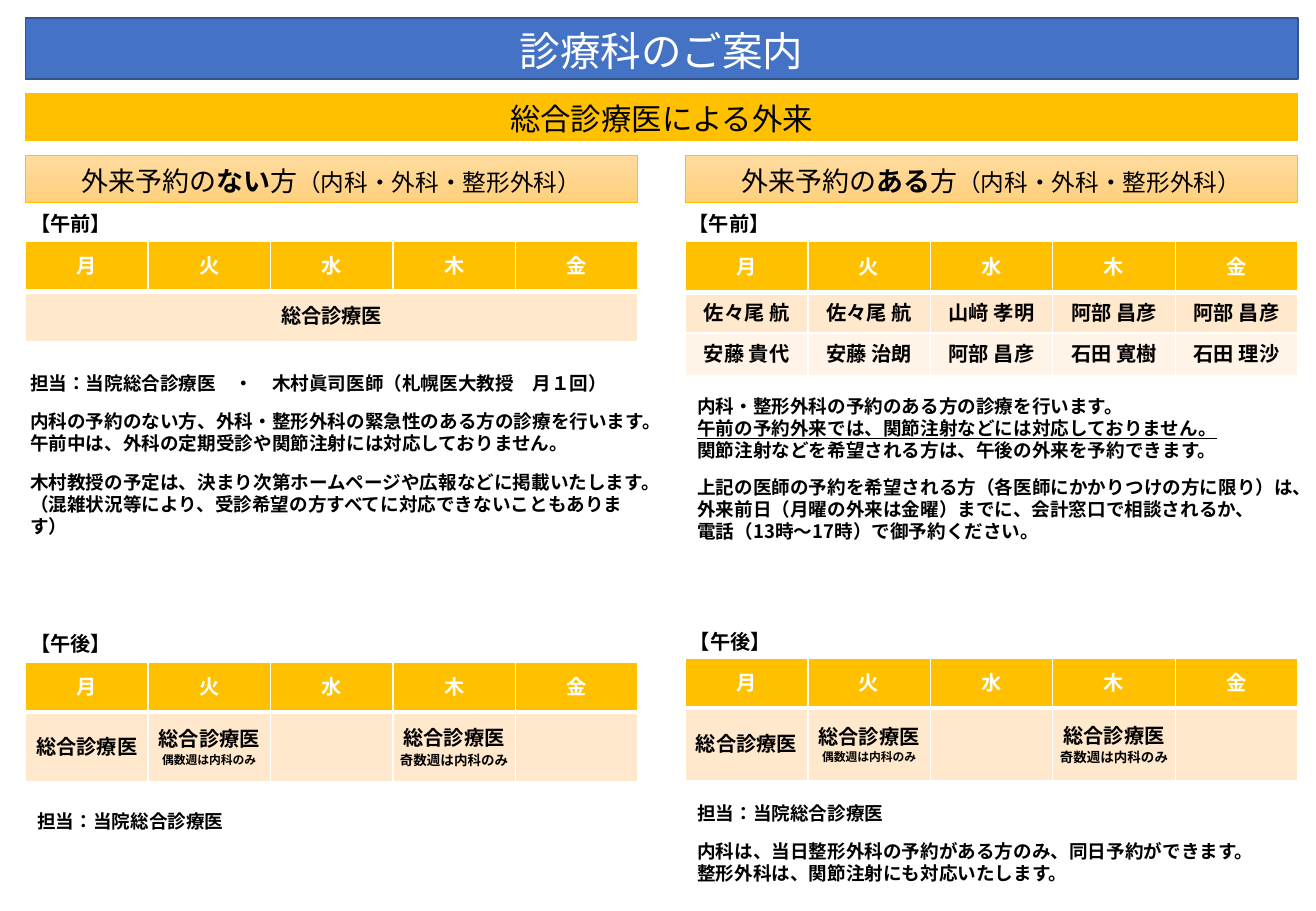
from pptx import Presentation
from pptx.dml.color import RGBColor
from pptx.enum.lang import MSO_LANGUAGE_ID
from pptx.enum.shapes import MSO_SHAPE
from pptx.enum.text import MSO_ANCHOR, PP_ALIGN
from pptx.oxml.ns import qn
from pptx.util import Inches, Pt
from lxml import etree

FONT = "Noto Sans CJK JP"
RECTANGLE = MSO_SHAPE.RECTANGLE
MIDDLE = MSO_ANCHOR.MIDDLE
LEFT, CENTER = PP_ALIGN.LEFT, PP_ALIGN.CENTER
JAPANESE = MSO_LANGUAGE_ID.JAPANESE

WHITE = RGBColor(0xFF, 0xFF, 0xFF)
BLACK = RGBColor(0, 0, 0)
BLUE = RGBColor(0x44, 0x72, 0xC4)
NAVY = RGBColor(0x32, 0x54, 0x91)
GOLD = RGBColor(0xFF, 0xC0, 0x00)
SAND_TOP = RGBColor(0xFF, 0xDB, 0x9E)
SAND_BOTTOM = RGBColor(0xFF, 0xD0, 0x7C)
PEACH = RGBColor(0xFF, 0xE8, 0xCC)
CREAM = RGBColor(0xFF, 0xF4, 0xE7)

LEFT_COLUMN, RIGHT_COLUMN = 0.21, 5.64
COLUMN_WIDTH, FULL_WIDTH = 5.04, 10.47
LOOSE, TIGHT = 1.3, 1.2  # line pitch as a multiple of the text size

WEEKDAYS = ["月", "火", "水", "木", "金"]
GENERALIST = "総合診療医"
STAFF = "担当：当院総合診療医"
NO_INJECTIONS = "午前の予約外来では、関節注射などには対応しておりません。"


class ClinicPage:
    """Style and drawing methods for the current slide."""

    def __init__(self, deck):
        self.page = deck.slides.add_slide(deck.slide_layouts[6])

    def style(self, span, size, bold=False, color=BLACK):
        font = span.font
        font.name, font.size, font.bold = FONT, Pt(size), bold
        font.color.rgb = color
        font.language_id = JAPANESE
        latin = span._r.get_or_add_rPr().find(qn("a:latin"))
        latin.addnext(etree.Element(qn("a:ea"), typeface=FONT))

    def fill_para(self, para, spans, pitch, color=BLACK, align=LEFT):
        """Fill a paragraph with (text, size, bold) spans."""
        para.alignment = align
        para.line_spacing = Pt(round(pitch * max(size for _, size, _ in spans), 1))
        para._p.get_or_add_pPr().set("hangingPunct", "1")
        for text, size, bold in spans:
            span = para.add_run()
            span.text = text
            self.style(span, size, bold, color)

    def banner(self, left, top, width, height, spans, line, line_width,
               fill=None, color=BLACK):
        """Draw a title bar; without a fill it gets the sand gradient."""
        box = self.page.shapes.add_shape(
            RECTANGLE, Inches(left), Inches(top), Inches(width), Inches(height))
        box.shadow.inherit = False
        if fill is None:
            box.fill.gradient()
            box.fill.gradient_angle = 270
            for stop, shade in zip(box.fill.gradient_stops, (SAND_TOP, SAND_BOTTOM)):
                stop.color.rgb = shade
        else:
            box.fill.solid()
            box.fill.fore_color.rgb = fill
        box.line.color.rgb = line
        box.line.width = Pt(line_width)
        frame = box.text_frame
        frame.vertical_anchor = MIDDLE
        self.fill_para(frame.paragraphs[0], spans, LOOSE, color, CENTER)

    def notes(self, left, top, width, height, blocks, size=11, gap=9.6, wrap=True):
        """Set blocks of lines with a gap between the blocks."""
        box = self.page.shapes.add_textbox(
            Inches(left), Inches(top), Inches(width), Inches(height))
        frame = box.text_frame
        frame.word_wrap = wrap
        para = None
        for block in blocks:
            for index, text in enumerate(block):
                starts_block = para is not None and index == 0
                para = frame.paragraphs[0] if para is None else frame.add_paragraph()
                self.fill_para(para, [(text, size, True)], TIGHT)
                if starts_block:
                    para.space_before = Pt(gap)
                if text == NO_INJECTIONS:
                    para.runs[0].font.underline = True

    def label(self, left, top, text):
        self.notes(left, top, 0.9, 0.3, [[text]], size=12, wrap=False)

    def borders(self, cell, bottom):
        properties = cell._tc.get_or_add_tcPr()
        for side, width in (("L", 1), ("R", 1), ("T", 1), ("B", bottom)):
            edge = etree.SubElement(properties, qn("a:ln" + side), w=str(int(Pt(width))))
            fill = etree.SubElement(edge, qn("a:solidFill"))
            etree.SubElement(fill, qn("a:srgbClr"), val=str(WHITE))

    def timetable(self, left, top, heights, rows, merged=False):
        """Draw a weekday table; each body cell is a list of (text, size)."""
        header = [[(day, 12)] for day in WEEKDAYS]
        grid = [header] + rows
        table = self.page.shapes.add_table(
            len(grid), len(WEEKDAYS), Inches(left), Inches(top),
            Inches(COLUMN_WIDTH), Inches(sum(heights))).table
        for column in table.columns:
            column.width = Inches(COLUMN_WIDTH / len(WEEKDAYS))
        for y, (entries, height) in enumerate(zip(grid, heights)):
            table.rows[y].height = Inches(height)
            for x, lines in enumerate(entries):
                cell = table.cell(y, x)
                self.borders(cell, 1 if y else 3)
                cell.fill.solid()
                cell.fill.fore_color.rgb = (GOLD, PEACH, CREAM)[y]
                cell.vertical_anchor = MIDDLE
                if y:
                    cell.margin_left = cell.margin_right = Inches(0.05)
                for index, (text, size) in enumerate(lines):
                    frame = cell.text_frame
                    para = frame.add_paragraph() if index else frame.paragraphs[0]
                    self.fill_para(para, [(text, size, True)], LOOSE,
                                   BLACK if y else WHITE, CENTER)
        if merged:
            table.cell(1, 0).merge(table.cell(1, len(WEEKDAYS) - 1))


def main():
    deck = Presentation()
    deck.slide_width, deck.slide_height = Inches(10.83), Inches(7.5)
    clinic = ClinicPage(deck)

    # Title bars
    clinic.banner(LEFT_COLUMN, 0.15, FULL_WIDTH, 0.5, [("診療科のご案内", 24, False)],
                  NAVY, 1, BLUE, WHITE)
    clinic.banner(LEFT_COLUMN, 0.77, FULL_WIDTH, 0.39,
                  [("総合診療医による外来", 18, False)], GOLD, 0.5, GOLD)
    for left, status in ((LEFT_COLUMN, "ない"), (RIGHT_COLUMN, "ある")):
        clinic.banner(left, 1.28, COLUMN_WIDTH, 0.39,
                      [("外来予約の", 16, False), (status, 16, True), ("方", 16, False),
                       ("（内科・外科・整形外科）", 14, False)], GOLD, 0.5)

    # Morning timetables
    clinic.label(0.15, 1.69, "【午前】")
    clinic.label(5.57, 1.69, "【午前】")
    clinic.timetable(LEFT_COLUMN, 1.99, [0.41, 0.41],
                     [[[(GENERALIST, 12)], [], [], [], []]], merged=True)
    doctors = [["佐々尾 航", "佐々尾 航", "山﨑 孝明", "阿部 昌彦", "阿部 昌彦"],
               ["安藤 貴代", "安藤 治朗", "阿部 昌彦", "石田 寛樹", "石田 理沙"]]
    clinic.timetable(RIGHT_COLUMN, 1.99, [0.42, 0.33, 0.35],
                     [[[(name, 12)] for name in row] for row in doctors])

    # Morning notes
    clinic.notes(0.15, 3.01, 5.3, 1.3, [
        ["担当：当院総合診療医　・　木村眞司医師（札幌医大教授　月１回）"],
        ["内科の予約のない方、外科・整形外科の緊急性のある方の診療を行います。",
         "午前中は、外科の定期受診や関節注射には対応しておりません。"],
        ["木村教授の予定は、決まり次第ホームページや広報などに掲載いたします。",
         "（混雑状況等により、受診希望の方すべてに対応できないこともあります）"]])
    clinic.notes(RIGHT_COLUMN, 3.2, 5.13, 1.33, [
        ["内科・整形外科の予約のある方の診療を行います。",
         NO_INJECTIONS,
         "関節注射などを希望される方は、午後の外来を予約できます。"],
        ["上記の医師の予約を希望される方（各医師にかかりつけの方に限り）は、",
         "外来前日（月曜の外来は金曜）までに、会計窓口で相談されるか、",
         "電話（13時〜17時）で御予約ください。"]], gap=8.4)

    # Afternoon timetables
    afternoon = [[(GENERALIST, 12)],
                 [(GENERALIST, 12), ("偶数週は内科のみ", 7)],
                 [],
                 [(GENERALIST, 12), ("奇数週は内科のみ", 8)],
                 []]
    clinic.label(0.15, 5.15, "【午後】")
    clinic.label(5.58, 5.13, "【午後】")
    clinic.timetable(LEFT_COLUMN, 5.45, [0.41, 0.58], [afternoon])
    clinic.timetable(RIGHT_COLUMN, 5.42, [0.41, 0.6], [afternoon])

    # Afternoon notes
    clinic.notes(LEFT_COLUMN, 6.62, 5.3, 0.47, [[STAFF]])
    clinic.notes(RIGHT_COLUMN, 6.55, 5.3, 0.79, [
        [STAFF],
        ["内科は、当日整形外科の予約がある方のみ、同日予約ができます。",
         "整形外科は、関節注射にも対応いたします。"]])

    deck.save("out.pptx")


if __name__ == "__main__":
    main()
